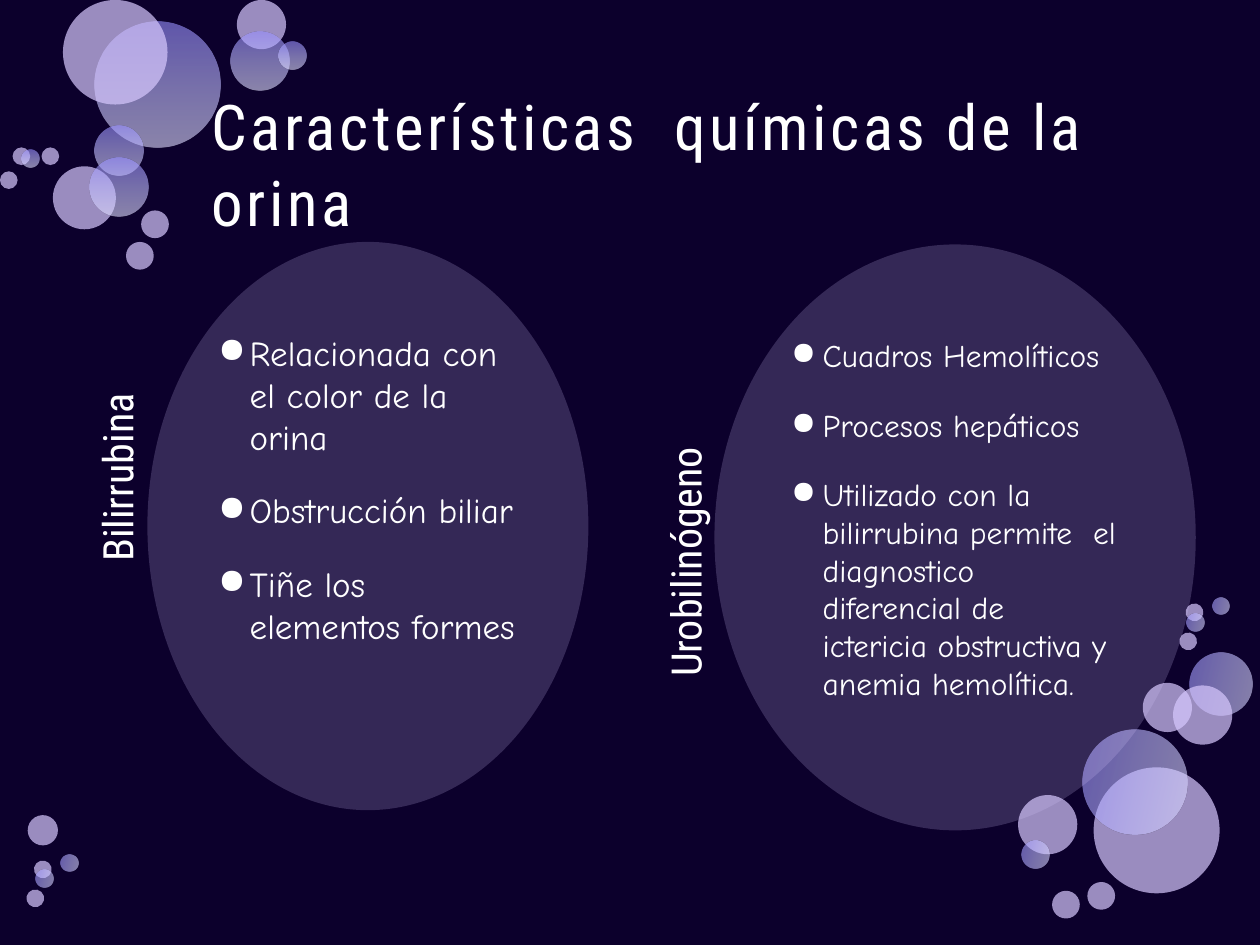
from lxml import etree
from pptx import Presentation
from pptx import util as u
from pptx.dml.color import RGBColor
from pptx.enum import shapes, text
from pptx.oxml.ns import qn

NIGHT = RGBColor(0x0C, 0x00, 0x2C)
LILAC = RGBColor(0xD7, 0xC8, 0xFE)
WHITE = RGBColor(0xFF, 0xFF, 0xFF)
VIOLET = RGBColor(0x98, 0x90, 0xFF)
PERIWINKLE = RGBColor(0xBF, 0xBB, 0xFF)
MIST = RGBColor(0xE0, 0xDE, 0xFF)
HEADING_FONT = "Roboto Condensed"
BODY_FONT = "Comic Neue"
PLAIN, SHADED = False, True

# Bubbles from back to front: left, top, diameter, fill style
TOP_BUBBLES = [
    (0.75, 0.17, 1, SHADED), (0.42, 1.32, 0.5, PLAIN),
    (0.75, 1, 0.39, SHADED), (0.71, 1.25, 0.47, SHADED),
    (0.5, 0, 0.83, PLAIN), (1.88, 0, 0.39, PLAIN),
    (1.83, 0.25, 0.47, SHADED), (2.21, 0.33, 0.22, SHADED),
    (1.12, 1.67, 0.22, PLAIN), (0.1, 1.17, 0.14, PLAIN),
    (1, 1.92, 0.22, PLAIN), (0, 1.36, 0.14, PLAIN),
    (0.17, 1.19, 0.14, SHADED), (0.33, 1.17, 0.14, PLAIN),
]
BOTTOM_BUBBLES = [
    (8.68, 6.09, 1, PLAIN), (9.44, 5.18, 0.5, SHADED),
    (9.07, 5.42, 0.39, PLAIN), (9.31, 5.44, 0.47, PLAIN),
    (8.59, 5.79, 0.83, SHADED), (0.22, 6.47, 0.24, PLAIN),
    (8.08, 6.31, 0.47, PLAIN), (8.11, 6.67, 0.22, SHADED),
    (8.35, 7.07, 0.22, PLAIN), (9.41, 4.79, 0.14, PLAIN),
    (8.63, 7, 0.22, PLAIN), (9.62, 4.74, 0.14, SHADED),
    (9.42, 4.87, 0.14, SHADED), (9.36, 5.02, 0.14, PLAIN),
    (0.27, 6.83, 0.14, PLAIN), (0.48, 6.78, 0.14, SHADED),
    (0.28, 6.9, 0.14, SHADED), (0.21, 7.06, 0.14, PLAIN),
]

# Label box, ellipse box, text size and bullets of each topic
TOPICS = [
    ("Bilirrubina", (-0.95, 3.44, 3.75, 0.7), (1.17, 1.92, 3.5, 4.51), 20,
     ["Relacionada con el color de la orina",
      "Obstrucción biliar",
      "Tiñe los elementos formes"]),
    ("Urobilinógeno", (3.56, 4.11, 3.75, 0.7), (5.67, 1.94, 3.82, 4.65), 18,
     ["Cuadros Hemolíticos",
      "Procesos hepáticos",
      "Utilizado con la bilirrubina permite  el diagnostico diferencial "
      "de ictericia obstructiva y anemia hemolítica."]),
]


def inches(box):
    return [u.Inches(length) for length in box]


def set_alpha(color_element, percent):
    etree.SubElement(color_element, qn("a:alpha"), val=str(percent * 1000))


def add_ellipse(slide, box, opacity):
    shape = slide.shapes.add_shape(shapes.MSO_SHAPE.OVAL, *inches(box))
    shape.shadow.inherit = False
    shape.line.fill.background()
    shape.fill.solid()
    shape.fill.fore_color.rgb = LILAC
    set_alpha(shape.fill._xPr.find(".//" + qn("a:srgbClr")), opacity)
    return shape


def shade(shape):
    """Replace the solid fill with a translucent vertical gradient."""
    properties = shape._element.spPr
    solid = properties.find(qn("a:solidFill"))
    gradient = etree.Element(qn("a:gradFill"), rotWithShape="1")
    stops = etree.SubElement(gradient, qn("a:gsLst"))
    for position, color in ((0, VIOLET), (50, PERIWINKLE), (100, MIST)):
        stop = etree.SubElement(stops, qn("a:gs"), pos=str(position * 1000))
        set_alpha(etree.SubElement(stop, qn("a:srgbClr"), val=str(color)), 60)
    etree.SubElement(gradient, qn("a:lin"), ang="5400000", scaled="0")
    properties.replace(solid, gradient)


def add_bubbles(slide, bubbles, turned=False):
    for left, top, size, shaded in bubbles:
        bubble = add_ellipse(slide, (left, top, size, size), 70)
        if shaded:
            shade(bubble)
        if turned:
            bubble.rotation = 103.3
            bubble._element.spPr.find(qn("a:xfrm")).set("flipV", "1")


def set_frame(frame, anchor, inset=0.05):
    frame.word_wrap = True
    frame.auto_size = text.MSO_AUTO_SIZE.NONE
    frame.vertical_anchor = anchor
    frame.margin_left = frame.margin_right = u.Inches(inset)
    frame.margin_top = frame.margin_bottom = u.Inches(0.05)


def add_run(paragraph, words, font_name, size):
    run = paragraph.add_run()
    run.text = words
    run.font.name = font_name
    run.font.size = u.Pt(size)
    run.font.color.rgb = WHITE
    return run


def add_title(slide, words):
    title = slide.shapes.title
    title.left, title.top, title.width, title.height = inches((1.58, 0.67, 7.25, 1.25))
    set_frame(title.text_frame, text.MSO_ANCHOR.MIDDLE, 0.1)
    paragraph = title.text_frame.paragraphs[0]
    paragraph.alignment = text.PP_ALIGN.LEFT
    run = add_run(paragraph, words, HEADING_FONT, 36)
    run.font._element.set("spc", "200")


def add_label(slide, words, box):
    label = slide.shapes.add_textbox(*inches(box))
    label.rotation = 270
    set_frame(label.text_frame, text.MSO_ANCHOR.MIDDLE)
    paragraph = label.text_frame.paragraphs[0]
    paragraph.alignment = text.PP_ALIGN.CENTER
    paragraph.space_before = u.Pt(18)
    add_run(paragraph, words, HEADING_FONT, 24)


def add_bullet_ellipse(slide, box, size, items):
    frame = add_ellipse(slide, box, 20).text_frame
    set_frame(frame, text.MSO_ANCHOR.TOP)
    for index, item in enumerate(items):
        paragraph = frame.add_paragraph() if index else frame.paragraphs[0]
        paragraph.alignment = text.PP_ALIGN.LEFT
        paragraph.space_before = u.Pt(18)
        properties = paragraph._p.get_or_add_pPr()
        properties.set("marL", str(u.Inches(0.25)))
        properties.set("indent", str(u.Inches(-0.25)))
        etree.SubElement(properties, qn("a:buChar"), char="●")
        add_run(paragraph, item, BODY_FONT, size)


def main():
    presentation = Presentation()
    presentation.slide_width = u.Inches(10)
    presentation.slide_height = u.Inches(7.5)
    slide = presentation.slides.add_slide(presentation.slide_layouts[5])
    slide.background.fill.solid()
    slide.background.fill.fore_color.rgb = NIGHT

    # Bubble decoration behind the content
    add_bubbles(slide, TOP_BUBBLES)
    add_bubbles(slide, BOTTOM_BUBBLES, turned=True)

    # Title, moved in front of the bubbles
    add_title(slide, "Características  químicas de la orina")
    slide.shapes._spTree.append(slide.shapes.title._element)

    # Topics with a vertical label and a bullet ellipse
    for label, label_box, ellipse_box, size, items in TOPICS:
        add_label(slide, label, label_box)
        add_bullet_ellipse(slide, ellipse_box, size, items)

    presentation.save("out.pptx")


if __name__ == "__main__":
    main()
